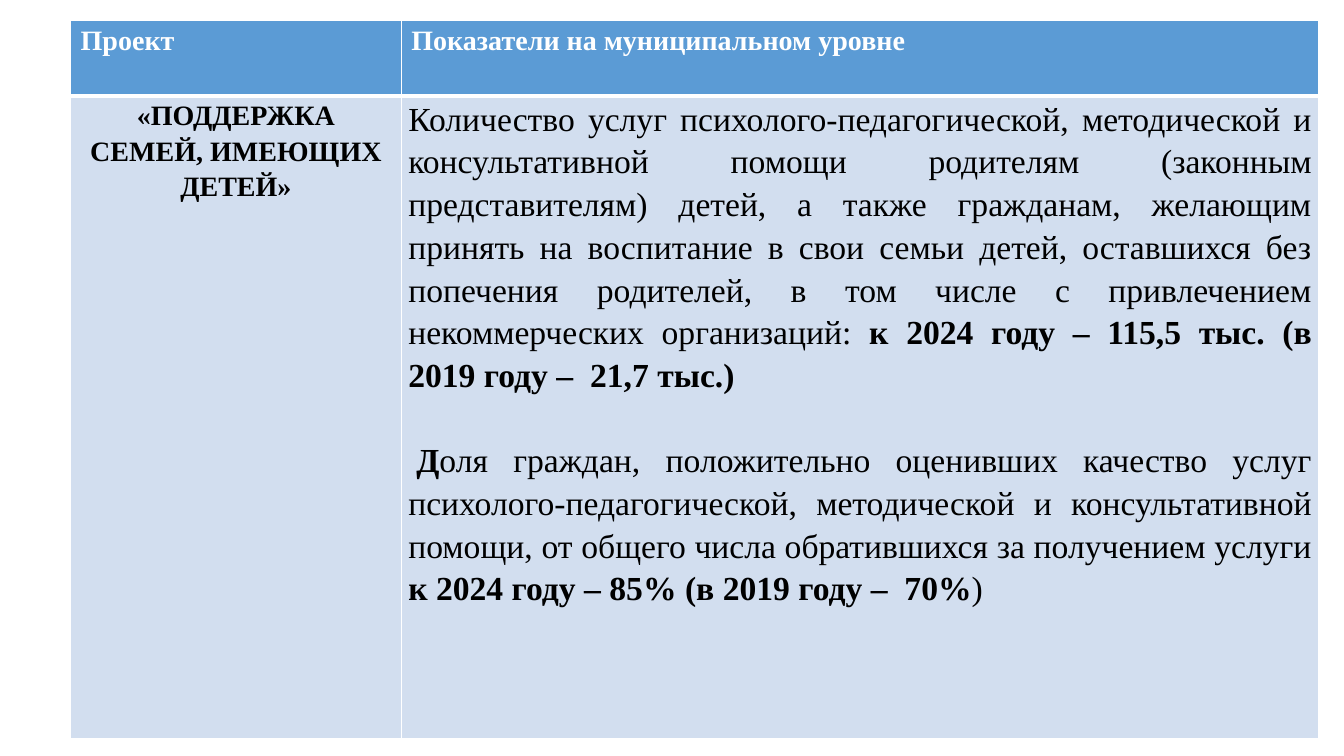
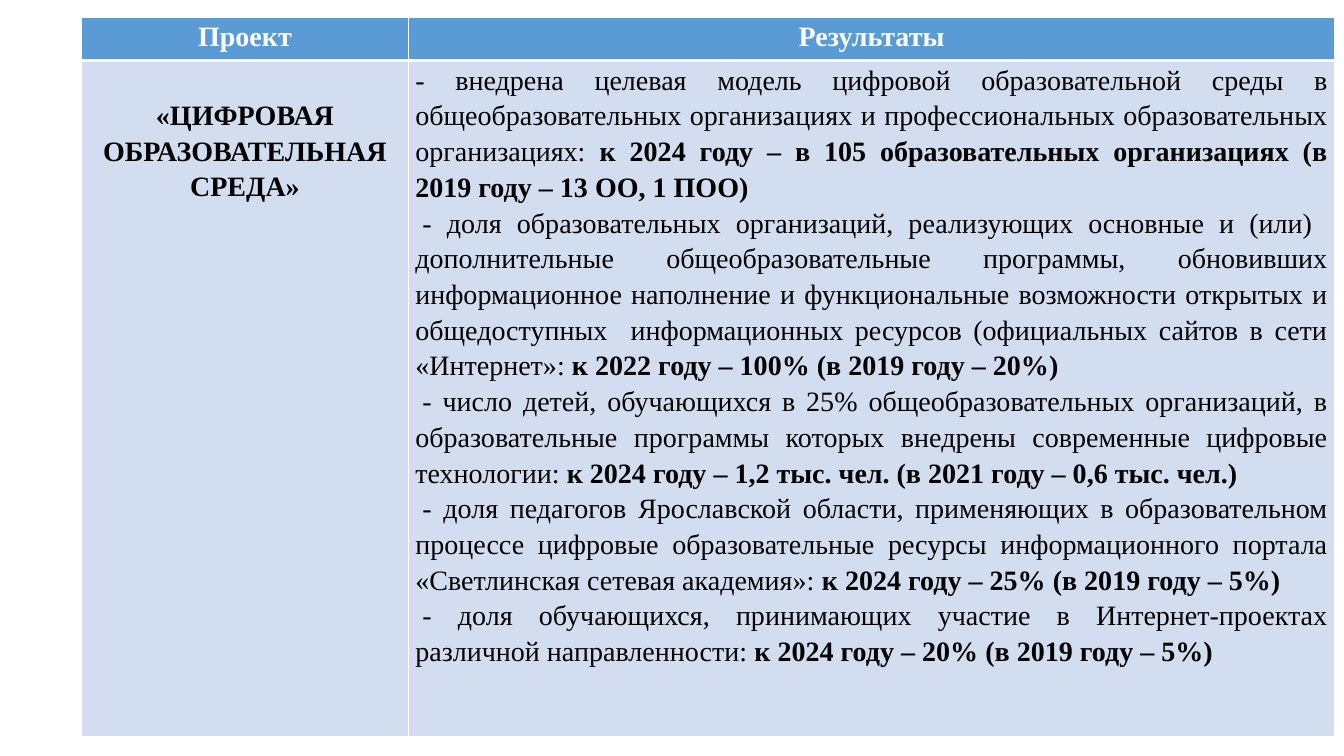
from dataclasses import dataclass
from lxml.etree import SubElement
from pptx import Presentation
from pptx.dml.color import RGBColor as RGB
from pptx.enum.text import PP_ALIGN as Align
from pptx.oxml.ns import qn
from pptx.util import Inches, Pt


@dataclass(frozen=True)
class Theme:
    font: str = "Times New Roman"
    head: str = "5B9BD5"
    body: str = "D2DEEF"
    light: str = "FFFFFF"
    dark: str = "000000"
    size: int = 20
    large: int = 24
    thin: int = 1
    thick: int = 3
    lead: float = 1.15


THEME = Theme()
SNUG = (0.07, 0)
ROOMY = (0.1, 0.05)

SLIDES = [
    {
        "at": (0.7, 0.2), "cols": (3.28, 9.1), "rows": (0.75, 6.38),
        "heads": ("Проект", "Показатели на муниципальном уровне"),
        "align": Align.LEFT, "inset": ROOMY, "lead": 1,
        "name": "«ПОДДЕРЖКА СЕМЕЙ, ИМЕЮЩИХ ДЕТЕЙ»", "drop": 0,
        "size": THEME.large, "gap": 30.5, "indent": 0.08,
        "goals": [
            ("Количество услуг психолого-педагогической, методической и консультативной помощи "
             "родителям (законным представителям) детей, а также гражданам, желающим принять на "
             "воспитание в свои семьи детей, оставшихся без попечения родителей, в том числе с "
             "привлечением некоммерческих организаций: ",
             "к 2024 году – 115,5 тыс. (в 2019 году –  21,7 тыс.)"),
            ("", "Д",
             "оля граждан, положительно оценивших качество услуг психолого-педагогической, "
             "методической и консультативной помощи, от общего числа обратившихся за получением "
             "услуги ",
             "к 2024 году – 85% (в 2019 году –  70%", ")"),
        ],
    },
    {
        "at": (0.81, 0.17), "cols": (3.24, 9.19), "rows": (0.43, 6.71),
        "heads": ("Проект", "Результаты"),
        "align": Align.CENTER, "inset": SNUG, "lead": THEME.lead,
        "name": "«ЦИФРОВАЯ ОБРАЗОВАТЕЛЬНАЯ СРЕДА»", "drop": 0.35,
        "size": THEME.size, "gap": 0, "indent": 0.07,
        "goals": [
            ("- внедрена целевая модель цифровой образовательной среды в общеобразовательных "
             "организациях и профессиональных образовательных организациях:",
             " к 2024 году – в 105 образовательных организациях (в 2019 году – 13 ОО, 1 ПОО)"),
            ("- доля образовательных организаций, реализующих основные и (или)  дополнительные "
             "общеобразовательные программы, обновивших информационное наполнение и "
             "функциональные возможности открытых и общедоступных  информационных ресурсов "
             "(официальных сайтов в сети «Интернет»: ",
             "к 2022 году – 100% (в 2019 году – 20%)"),
            ("- число детей, обучающихся в 25% общеобразовательных организаций, в "
             "образовательные программы которых внедрены современные цифровые технологии: ",
             "к 2024 году – 1,2 тыс. чел. (в 2021 году – 0,6 тыс. чел.)"),
            ("- доля педагогов Ярославской области, применяющих в образовательном процессе "
             "цифровые образовательные ресурсы информационного портала «Светлинская сетевая "
             "академия»: ",
             "к 2024 году – 25% (в 2019 году – 5%)"),
            ("- доля обучающихся, принимающих участие в Интернет-проектах различной "
             "направленности: ",
             "к 2024 году – 20% (в 2019 году – 5%)"),
        ],
    },
]


def style(cell, fill, inset, thick, drop=0):
    side, edge = (Inches(x) for x in inset)
    cell.margin_left = cell.margin_right = side
    cell.margin_top, cell.margin_bottom = edge + Inches(drop), edge
    props = cell._tc.get_or_add_tcPr()
    for tag in ("lnL", "lnR", "lnT", "lnB"):
        width = THEME.thick if tag == thick else THEME.thin
        line = SubElement(props, qn("a:" + tag), w=str(Pt(width)))
        paint = SubElement(line, qn("a:solidFill"))
        SubElement(paint, qn("a:srgbClr"), val=THEME.light)
    cell.fill.solid()
    cell.fill.fore_color.rgb = RGB.from_string(fill)


def write(para, parts, size, color, align, lead=THEME.lead):
    para.alignment, para.line_spacing = align, lead
    for i, text in enumerate(parts):
        if text:
            run = para.add_run()
            run.text = text
            font = run.font
            font.name, font.size, font.bold = THEME.font, Pt(size), i % 2 == 1
            font.color.rgb = RGB.from_string(color)


def build(deck, page):
    slide = deck.slides.add_slide(deck.slide_layouts[6])
    cols, rows = page["cols"], page["rows"]
    place = (*page["at"], sum(cols), sum(rows))
    table = slide.shapes.add_table(2, 2, *(Inches(x) for x in place)).table
    table.horz_banding = False
    for col, width in zip(table.columns, cols):
        col.width = Inches(width)
    for row, height in zip(table.rows, rows):
        row.height = Inches(height)

    for i, text in enumerate(page["heads"]):
        cell = table.cell(0, i)
        style(cell, THEME.head, page["inset"], "lnB")
        write(cell.text_frame.paragraphs[0], ("", text), THEME.size, THEME.light,
              page["align"], page["lead"])

    name, goals = table.cell(1, 0), table.cell(1, 1)
    style(name, THEME.body, SNUG, "lnT", page["drop"])
    write(name.text_frame.paragraphs[0], ("", page["name"]), THEME.size, THEME.dark,
          Align.CENTER)
    style(goals, THEME.body, SNUG, "lnT")
    frame = goals.text_frame
    for i, parts in enumerate(page["goals"]):
        para = frame.add_paragraph() if i else frame.paragraphs[0]
        write(para, parts, page["size"], THEME.dark, Align.JUSTIFY)
        if i:
            para.space_before = Pt(page["gap"])
            para._p.get_or_add_pPr().set("indent", str(Inches(page["indent"])))


def main():
    deck = Presentation()
    deck.slide_width, deck.slide_height = Inches(13.33), Inches(7.5)
    for page in SLIDES:
        build(deck, page)
    deck.save("out.pptx")


if __name__ == "__main__":
    main()
